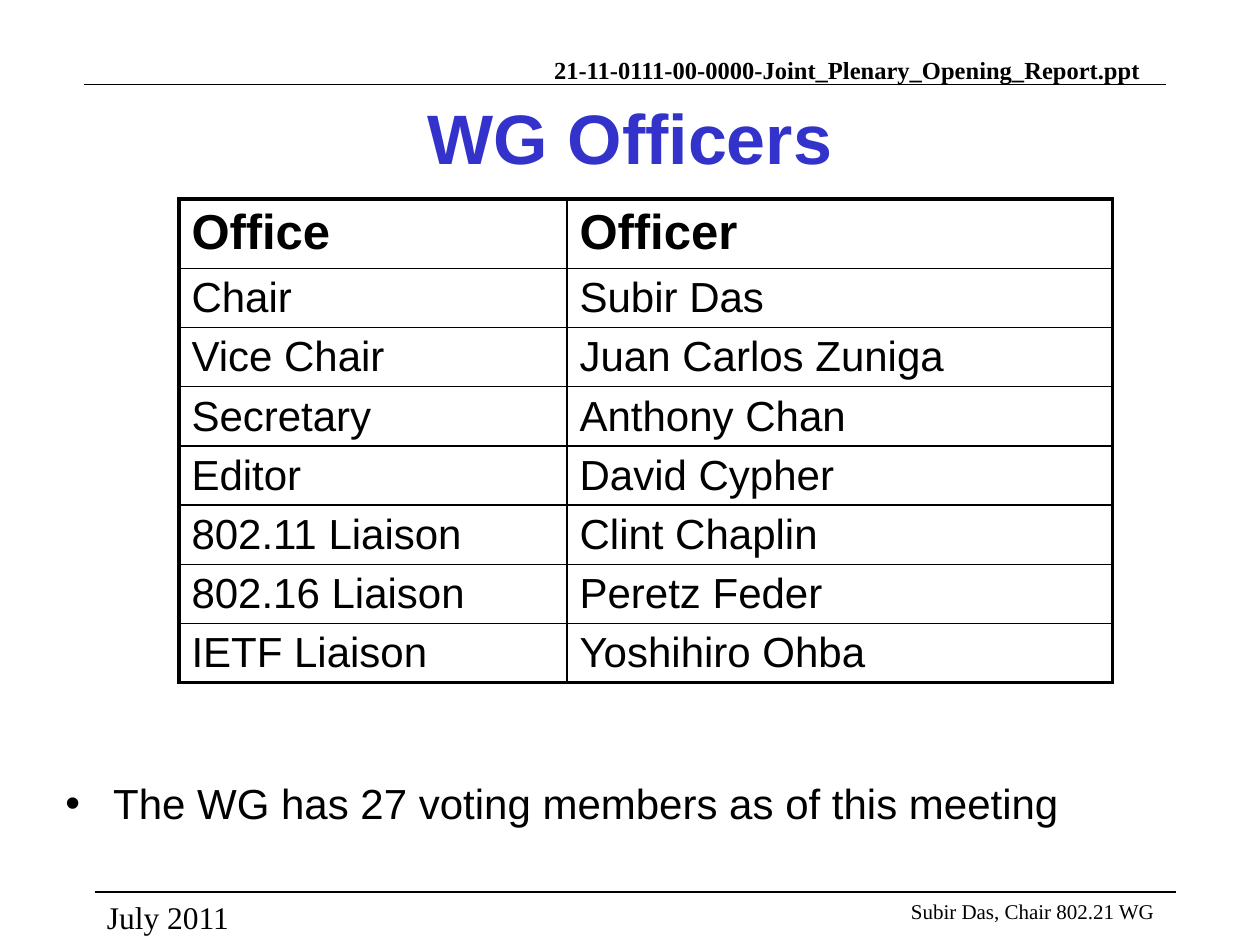
"""Build the working group officers slide."""
from dataclasses import dataclass
from typing import Any

from lxml import etree
from pptx import Presentation
from pptx.dml.color import RGBColor
from pptx.enum.shapes import MSO_CONNECTOR
from pptx.enum.text import MSO_ANCHOR, PP_ALIGN
from pptx.oxml.ns import qn
from pptx.util import Inches, Pt

STRAIGHT = MSO_CONNECTOR.STRAIGHT
TOP, MIDDLE, BOTTOM = MSO_ANCHOR.TOP, MSO_ANCHOR.MIDDLE, MSO_ANCHOR.BOTTOM
LEFT, CENTER, RIGHT = PP_ALIGN.LEFT, PP_ALIGN.CENTER, PP_ALIGN.RIGHT
TITLE_ONLY = 5


@dataclass(frozen=True)
class Theme:
    black: str = "000000"
    blue: str = "3333CC"
    sans: str = "Arial"
    serif: str = "Times New Roman"
    title: int = 40
    heading: int = 28
    body: int = 24
    date: int = 18
    document: int = 14
    author: int = 12
    thin: float = 1
    thick: float = 2.25


THEME = Theme()


@dataclass(frozen=True)
class Style:
    size: int
    font: str = THEME.sans
    color: str = THEME.black
    bold: bool = False
    align: Any = LEFT


@dataclass(frozen=True)
class Label:
    text: str
    area: tuple[float, float, float, float]
    style: Style
    margins: tuple[float, float, float, float] = (0.1, 0.05, 0.1, 0.05)
    anchor: Any = TOP
    bulleted: bool = False


@dataclass(frozen=True)
class Rule:
    left: float
    top: float
    width: float = 8.58


@dataclass(frozen=True)
class Post:
    office: str
    officer: str


TITLE = Label("WG Officers", (0.75, 0.75, 8.5, 0.67),
              Style(THEME.title, color=THEME.blue, bold=True, align=CENTER), anchor=MIDDLE)
LABELS = (
    Label("21-11-0111-00-0000-Joint_Plenary_Opening_Report.ppt", (3.87, 0.43, 5.18, 0.24),
          Style(THEME.document, THEME.serif, bold=True, align=RIGHT), (0, 0, 0, 0), BOTTOM),
    Label("July 2011", (0.75, 7.08, 1.33, 0.25), Style(THEME.date, THEME.serif)),
    Label("The WG has 27 voting members as of this meeting", (0.42, 6.08, 8.92, 0.67),
          Style(THEME.body), (0.1, 0.09, 0.1, 0.05), bulleted=True),
    Label("Subir Das, Chair 802.21 WG", (6.92, 7.08, 2.5, 0.42),
          Style(THEME.author, THEME.serif), (0.31, 0.05, 0.1, 0.05)),
)
RULES = (Rule(0.67, 0.67), Rule(0.75, 7.08))
POSTS = (
    Post("Office", "Officer"),
    Post("Chair", "Subir Das"),
    Post("Vice Chair", "Juan Carlos Zuniga"),
    Post("Secretary", "Anthony Chan"),
    Post("Editor", "David Cypher"),
    Post("802.11 Liaison", "Clint Chaplin"),
    Post("802.16 Liaison", "Peretz Feder"),
    Post("IETF Liaison", "Yoshihiro Ohba"),
)
TABLE_LEFT, TABLE_TOP = 1.42, 1.58
COLUMN_WIDTHS = (3.08, 4.33)
ROW_HEIGHTS = (0.55,) + (0.47,) * (len(POSTS) - 1)


def write(para: Any, text: str, style: Style) -> None:
    """Add one styled run to a paragraph."""
    para.alignment = style.align
    span = para.add_run()
    span.text = text
    span.font.name = style.font
    span.font.size = Pt(style.size)
    span.font.bold = style.bold
    span.font.color.rgb = RGBColor.from_string(style.color)


def add_bullet(para: Any) -> None:
    """Give a paragraph a hanging bullet."""
    properties = para._p.get_or_add_pPr()
    properties.set("marL", str(Inches(0.38)))
    properties.set("indent", str(Inches(-0.38)))
    etree.SubElement(properties, qn("a:buFont"), typeface=THEME.sans)
    etree.SubElement(properties, qn("a:buChar"), char="•")


def fill_box(box: Any, label: Label) -> None:
    """Place a box and write its label."""
    box.left, box.top, box.width, box.height = map(Inches, label.area)
    frame = box.text_frame
    frame.word_wrap = True
    frame.vertical_anchor = label.anchor
    (frame.margin_left, frame.margin_top,
     frame.margin_right, frame.margin_bottom) = map(Inches, label.margins)
    para = frame.paragraphs[0]
    if label.bulleted:
        add_bullet(para)
    write(para, label.text, label.style)


def add_rule(page: Any, rule: Rule) -> None:
    """Draw a horizontal rule."""
    line = page.shapes.add_connector(STRAIGHT, Inches(rule.left), Inches(rule.top),
                                     Inches(rule.left + rule.width), Inches(rule.top))
    line.line.color.rgb = RGBColor.from_string(THEME.black)
    line.line.width = Pt(THEME.thin)
    etree.SubElement(line._element.spPr, qn("a:effectLst"))


def add_borders(cell: Any, outer: dict[str, bool]) -> None:
    """Draw thick borders on outer sides and thin ones elsewhere."""
    properties = cell._tc.get_or_add_tcPr()
    for position, (side, is_outer) in enumerate(outer.items()):
        width = Pt(THEME.thick if is_outer else THEME.thin)
        border = etree.Element(qn(f"a:ln{side}"), w=str(width))
        fill = etree.SubElement(border, qn("a:solidFill"))
        etree.SubElement(fill, qn("a:srgbClr"), val=THEME.black)
        properties.insert(position, border)


def add_officers(page: Any) -> None:
    """Add the table of offices and officers."""
    area = (TABLE_LEFT, TABLE_TOP, sum(COLUMN_WIDTHS), sum(ROW_HEIGHTS))
    table = page.shapes.add_table(len(POSTS), len(COLUMN_WIDTHS), *map(Inches, area)).table
    table.first_row = table.horz_banding = False
    for column, width in zip(table.columns, COLUMN_WIDTHS):
        column.width = Inches(width)
    for index, (post, height) in enumerate(zip(POSTS, ROW_HEIGHTS)):
        table.rows[index].height = Inches(height)
        heading = index == 0
        style = Style(THEME.heading if heading else THEME.body, bold=heading)
        for position, text in enumerate((post.office, post.officer)):
            cell = table.cell(index, position)
            cell.margin_top, cell.margin_bottom = Inches(0.05), Inches(0.03)
            cell.fill.background()
            add_borders(cell, {"L": position == 0, "R": position == len(COLUMN_WIDTHS) - 1,
                               "T": heading, "B": index == len(POSTS) - 1})
            write(cell.text_frame.paragraphs[0], text, style)


def main() -> None:
    """Build and save the deck."""
    deck = Presentation()
    deck.slide_width, deck.slide_height = Inches(10), Inches(7.5)
    page = deck.slides.add_slide(deck.slide_layouts[TITLE_ONLY])
    for rule in RULES:
        add_rule(page, rule)
    fill_box(page.shapes.title, TITLE)
    add_officers(page)
    for label in LABELS:
        fill_box(page.shapes.add_textbox(*map(Inches, label.area)), label)
    deck.save("out.pptx")


if __name__ == "__main__":
    main()
